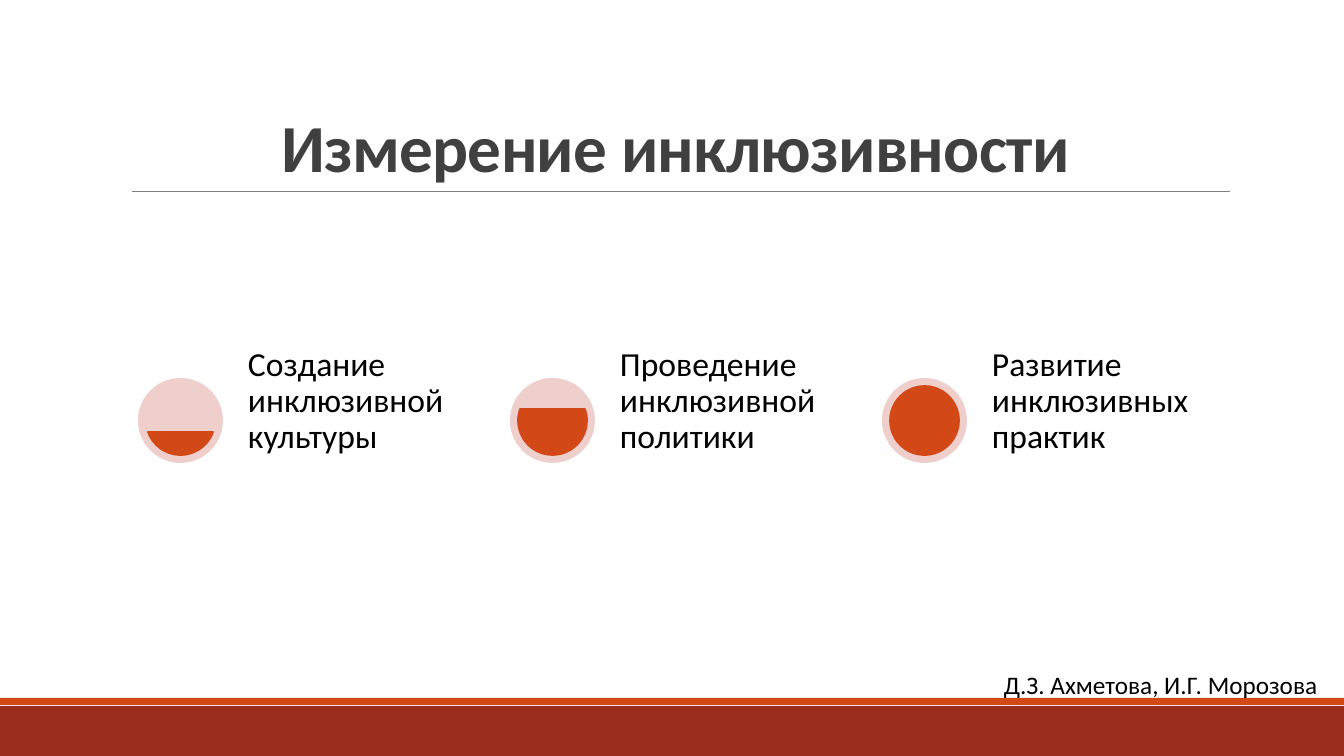
from math import asin, degrees

from lxml.etree import SubElement
from pptx import Presentation
from pptx.dml.color import RGBColor
from pptx.enum.shapes import MSO_CONNECTOR as Connector, MSO_SHAPE as Shape
from pptx.enum.text import MSO_ANCHOR as Anchor, MSO_AUTO_SIZE as AutoSize, PP_ALIGN as Align
from pptx.oxml.ns import qn
from pptx.util import Emu, Pt

WIDTH, HEIGHT = 1344, 756
FONT = "Calibri"
BLACK = RGBColor(0x00, 0x00, 0x00)
DARK_GRAY = RGBColor(0x40, 0x40, 0x40)
GRAY = RGBColor(0x80, 0x80, 0x80)
BRICK = RGBColor(0x9B, 0x2D, 0x1F)
ORANGE = RGBColor(0xD3, 0x48, 0x17)
PINK = RGBColor(0xEF, 0xCF, 0xCC)

DIMENSIONS = [
    "Создание инклюзивной культуры",
    "Проведение инклюзивной политики",
    "Развитие инклюзивных практик",
]
FIRST_LEFT, PITCH = 138, 372
GAUGE_TOP, GAUGE_SIZE, GAUGE_INSET = 378, 85, 8
LABEL_OFFSET, LABEL_WIDTH = 103, 252


def px(count):
    return Emu(round(count * 914400 / 100.8))


def frame_of(*lengths):
    return [px(length) for length in lengths]


def format_paragraph(para, size, color, bold=False):
    para.font.name = FONT
    para.font.size = Pt(size)
    para.font.bold = bold
    para.font.color.rgb = color


def add_title(page, text):
    title = page.shapes.title
    title.left, title.top, title.width, title.height = frame_of(121, 31, 1109, 160)
    title.text_frame.auto_size = AutoSize.NONE
    title.text_frame.vertical_anchor = Anchor.BOTTOM
    para = title.text_frame.paragraphs[0]
    para.alignment = Align.CENTER
    para.line_spacing = 0.85
    span = para.add_run()
    span.text = text
    span._r.get_or_add_rPr().set("spc", "-50")
    format_paragraph(para, 48, DARK_GRAY, bold=True)


def add_filled(page, kind, frame, color):
    shape = page.shapes.add_shape(kind, *frame_of(*frame))
    shape.shadow.inherit = False
    shape.fill.solid()
    shape.fill.fore_color.rgb = color
    shape.line.fill.background()
    return shape


def add_rule(page, left, right, top):
    rule = page.shapes.add_connector(Connector.STRAIGHT, *frame_of(left, top, right, top))
    rule.line.color.rgb = GRAY
    rule.line.width = Pt(0.5)
    SubElement(rule._element.spPr, qn("a:effectLst"))


def add_text(page, frame, text, size):
    box = page.shapes.add_textbox(*frame_of(*frame))
    box.text_frame.word_wrap = True
    para = box.text_frame.paragraphs[0]
    para.text = text
    format_paragraph(para, size, BLACK)
    return box.text_frame


def add_gauge(page, left, level):
    """Draw a disc filled from below to the given share of its height."""
    add_filled(page, Shape.OVAL, (left, GAUGE_TOP, GAUGE_SIZE, GAUGE_SIZE), PINK)
    size = GAUGE_SIZE - 2 * GAUGE_INSET
    frame = (left + GAUGE_INSET, GAUGE_TOP + GAUGE_INSET, size, size)
    chord = add_filled(page, Shape.CHORD, frame, ORANGE)
    chord.line.color.rgb = ORANGE
    chord.line.width = Pt(1.25)
    start = degrees(asin(1 - 2 * level))
    # Angles are stored in 60000ths of a degree, adjustments in 100000ths.
    for index, angle in enumerate((start, 180 - start)):
        chord.adjustments[index] = angle % 360 * 0.6


def add_label(page, left, text):
    frame = add_text(page, (left, GAUGE_TOP, LABEL_WIDTH, GAUGE_SIZE), text, 24)
    frame.vertical_anchor = Anchor.BOTTOM
    frame.margin_left = frame.margin_right = px(7)
    frame.margin_top = frame.margin_bottom = px(7)
    frame.paragraphs[0].line_spacing = 0.9


def main():
    deck = Presentation()
    deck.slide_width, deck.slide_height = px(WIDTH), px(HEIGHT)
    page = deck.slides.add_slide(deck.slide_layouts[5])

    add_filled(page, Shape.RECTANGLE, (0, 706, WIDTH, 50), BRICK)
    add_filled(page, Shape.RECTANGLE, (0, 698, WIDTH, 7), ORANGE)
    add_rule(page, 132, 1230, 191)
    add_title(page, "Измерение инклюзивности")

    for index, text in enumerate(DIMENSIONS):
        left = FIRST_LEFT + index * PITCH
        add_gauge(page, left, (index + 1) / len(DIMENSIONS))
        add_label(page, left + LABEL_OFFSET, text)

    add_text(page, (994, 664, 350, 40), "Д.З. Ахметова, И.Г. Морозова", 18)
    deck.save("out.pptx")


if __name__ == "__main__":
    main()
